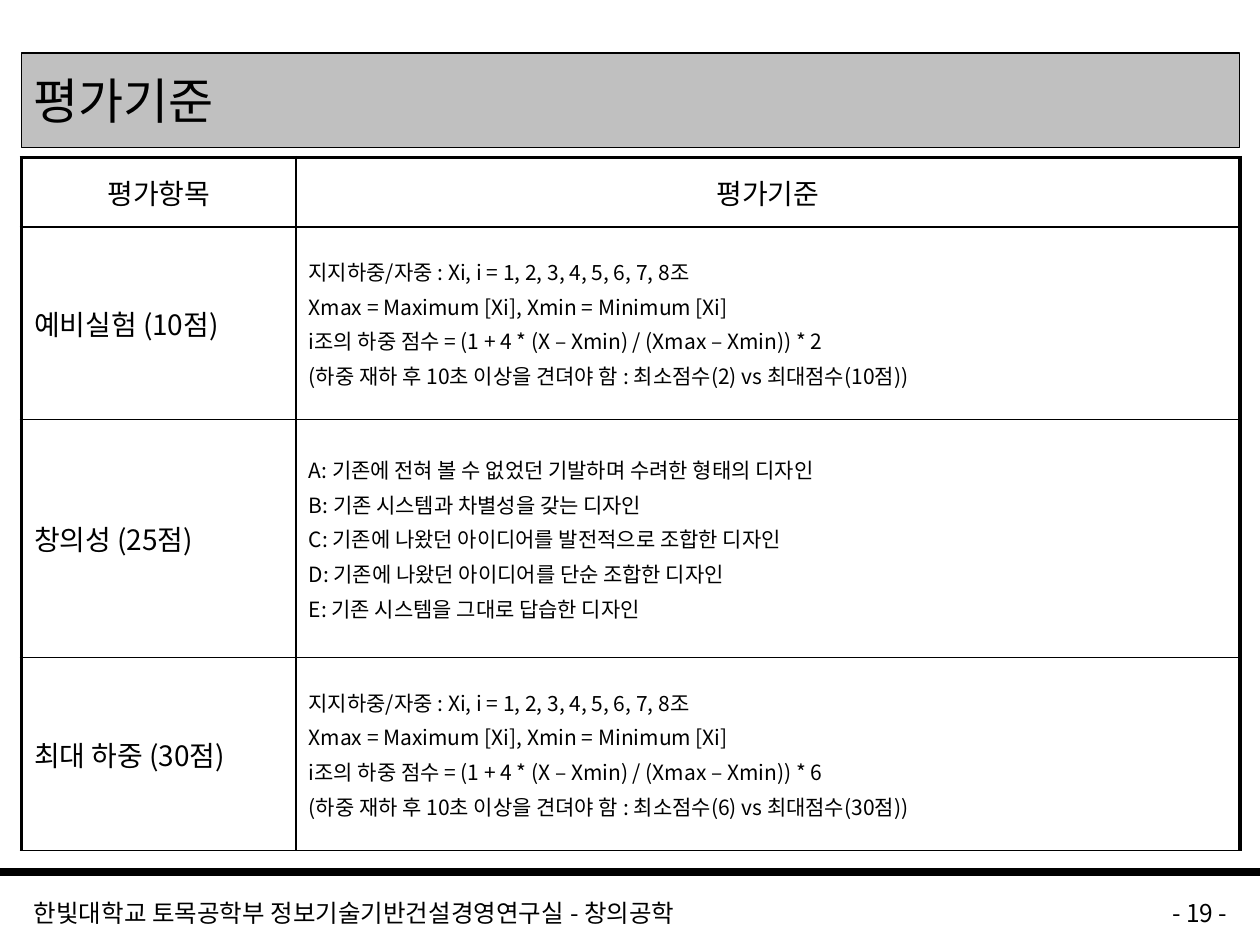
"""Build the evaluation criteria slide."""
from dataclasses import dataclass

from lxml.etree import SubElement
from pptx import Presentation
from pptx.dml.color import RGBColor
from pptx.enum.shapes import MSO_CONNECTOR, MSO_SHAPE
from pptx.enum.text import MSO_ANCHOR as Anchor, PP_ALIGN as Align
from pptx.oxml.ns import qn
from pptx.util import Inches, Pt


@dataclass(frozen=True)
class Theme:
    font: str = "Noto Sans CJK KR"
    ink: RGBColor = RGBColor(0, 0, 0)
    band: RGBColor = RGBColor(0xC0, 0xC0, 0xC0)
    title: int = 28
    head: int = 16
    body: int = 12
    footer: int = 14
    thin: float = 1
    thick: float = 2.25
    rule: float = 4.5
    spacing: float = 0.2


@dataclass(frozen=True)
class Criterion:
    item: str
    lines: tuple[str, ...]
    height: float


@dataclass(frozen=True)
class Footer:
    text: str
    left: float
    width: float
    align: Align


THEME = Theme()
LEFT, WIDTH = 0.17, 9.67
COLUMNS = (2.18, 7.49)
HEADERS = ("평가항목", "평가기준")
HEADER_HEIGHT = 0.55


def load_lines(factor: int, top_score: int) -> tuple[str, ...]:
    return (
        "지지하중/자중 : Xi, i = 1, 2, 3, 4, 5, 6, 7, 8조",
        "Xmax = Maximum [Xi], Xmin = Minimum [Xi]",
        f"i조의 하중 점수 = (1 + 4 * (X – Xmin) / (Xmax – Xmin)) * {factor}",
        f"(하중 재하 후 10초 이상을 견뎌야 함 : 최소점수({factor}) vs 최대점수({top_score}점))",
    )


CRITERIA = (
    Criterion("예비실험 (10점)", load_lines(2, 10), 1.53),
    Criterion("창의성 (25점)", (
        "A: 기존에 전혀 볼 수 없었던 기발하며 수려한 형태의 디자인",
        "B: 기존 시스템과 차별성을 갖는 디자인",
        "C: 기존에 나왔던 아이디어를 발전적으로 조합한 디자인",
        "D: 기존에 나왔던 아이디어를 단순 조합한 디자인",
        "E: 기존 시스템을 그대로 답습한 디자인",
    ), 1.89),
    Criterion("최대 하중 (30점)", load_lines(6, 30), 1.53),
)
FOOTERS = (
    Footer("한빛대학교 토목공학부 정보기술기반건설경영연구실 - 창의공학", LEFT, 7.83, Align.LEFT),
    Footer("- 19 -", 8.17, 1.67, Align.RIGHT),
)


def write(tf, text: str, size: int, align=Align.LEFT, spacing: float = 0) -> None:
    tf.text = text
    for p in tf.paragraphs:
        p.alignment = align
        p.space_before = Pt(size * spacing)
        for r in p.runs:
            r.font.name = THEME.font
            r.font.size = Pt(size)
            r.font.color.rgb = THEME.ink
            SubElement(r.font._element, qn("a:ea"), typeface=THEME.font)


def set_borders(cell, **widths: float) -> None:
    props = cell._tc.get_or_add_tcPr()
    for side in "LRTB":
        width = widths.get(side, THEME.thin)
        ln = SubElement(props, qn(f"a:ln{side}"), w=str(Pt(width)))
        fill = SubElement(ln, qn("a:solidFill"))
        SubElement(fill, qn("a:srgbClr"), val=str(THEME.ink))


def add_title(slide, text: str) -> None:
    sp = slide.shapes.add_shape(MSO_SHAPE.RECTANGLE, Inches(LEFT), Inches(0.42),
                                Inches(WIDTH), Inches(0.75))
    sp.shadow.inherit = False
    sp.fill.solid()
    sp.fill.fore_color.rgb = THEME.band
    sp.line.color.rgb = THEME.ink
    sp.line.width = Pt(0.75)
    sp.text_frame.vertical_anchor = Anchor.MIDDLE
    write(sp.text_frame, text, THEME.title)


def add_rule(slide, top: float) -> None:
    line = slide.shapes.add_connector(MSO_CONNECTOR.STRAIGHT, 0, Inches(top),
                                      Inches(10), Inches(top))
    line.line.color.rgb = THEME.ink
    line.line.width = Pt(THEME.rule)
    SubElement(line._element.spPr, qn("a:effectLst"))


def add_criteria(slide, criteria: tuple[Criterion, ...]) -> None:
    heights = (HEADER_HEIGHT, *(c.height for c in criteria))
    rows = (HEADERS, *((c.item, "\n".join(c.lines)) for c in criteria))
    table = slide.shapes.add_table(len(rows), len(COLUMNS), Inches(LEFT), Inches(1.25),
                                   Inches(WIDTH), Inches(sum(heights))).table
    table.first_row = table.horz_banding = False
    for column, width in zip(table.columns, COLUMNS):
        column.width = Inches(width)
    for i, (texts, height) in enumerate(zip(rows, heights)):
        table.rows[i].height = Inches(height)
        for j, text in enumerate(texts):
            cell = table.cell(i, j)
            outer = {"R" if j else "L": THEME.thick}
            if i == 0:
                outer["T"] = THEME.thick
            set_borders(cell, **outer)
            cell.fill.background()
            cell.vertical_anchor = Anchor.MIDDLE
            size = THEME.body if i and j else THEME.head
            align = Align.LEFT if i else Align.CENTER
            write(cell.text_frame, text, size, align, THEME.spacing)


def add_footer(slide, footer: Footer) -> None:
    box = slide.shapes.add_textbox(Inches(footer.left), Inches(7.08),
                                   Inches(footer.width), Inches(0.25))
    box.text_frame.word_wrap = True
    write(box.text_frame, footer.text, THEME.footer, footer.align)


def main() -> None:
    prs = Presentation()
    prs.slide_width, prs.slide_height = Inches(10), Inches(7.5)
    slide = prs.slides.add_slide(prs.slide_layouts[6])
    add_rule(slide, 6.92)
    add_title(slide, "평가기준")
    add_criteria(slide, CRITERIA)
    for footer in FOOTERS:
        add_footer(slide, footer)
    prs.save("out.pptx")


if __name__ == "__main__":
    main()
